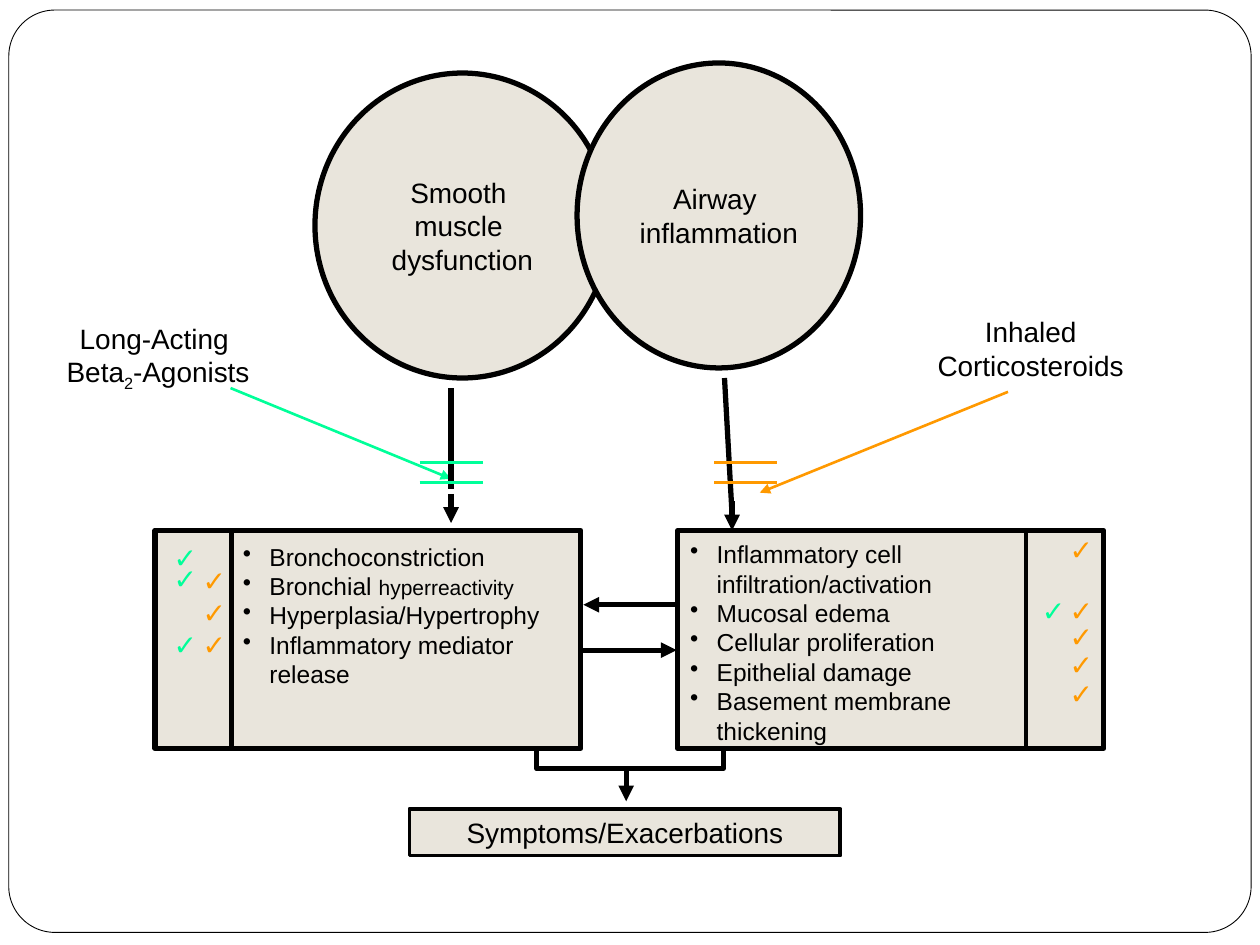
from typing import NamedTuple, Optional

from lxml.etree import SubElement
from pptx import Presentation
from pptx.dml.color import RGBColor
from pptx.enum.shapes import MSO_CONNECTOR, MSO_SHAPE
from pptx.enum.text import MSO_ANCHOR, MSO_AUTO_SIZE, PP_ALIGN
from pptx.oxml.ns import qn
from pptx.util import Inches, Pt

BLACK, WHITE, BEIGE = "000000", "FFFFFF", "E9E5DC"
AGONIST, STEROID = "00FF99", "FF9900"
CHECK_SIZE = (0.36, 0.37)


class Box(NamedTuple):
    left: float
    top: float
    width: float
    height: float


class Piece(NamedTuple):
    text: str
    size: Optional[float] = None
    baseline: Optional[int] = None


class Stroke(NamedTuple):
    start: tuple[float, float]
    end: tuple[float, float]
    color: str = BLACK
    weight: float = 3
    arrow: bool = False


class Checks(NamedTuple):
    left: float
    tops: tuple[float, ...]
    color: str


def rgb(color: str) -> RGBColor:
    return RGBColor.from_string(color)


def inches(values) -> list:
    return [Inches(value) for value in values]


def draw_shape(slide, kind, box: Box, fill: str = BEIGE, weight: float = 3):
    shape = slide.shapes.add_shape(kind, *inches(box))
    shape.shadow.inherit = False
    shape.fill.solid()
    shape.fill.fore_color.rgb = rgb(fill)
    shape.line.color.rgb = rgb(BLACK)
    shape.line.width = Pt(weight)
    return shape


def draw_stroke(slide, stroke: Stroke) -> None:
    connector = slide.shapes.add_connector(
        MSO_CONNECTOR.STRAIGHT, *inches(stroke.start + stroke.end))
    connector.line.color.rgb = rgb(stroke.color)
    connector.line.width = Pt(stroke.weight)
    if stroke.arrow:
        SubElement(connector.line._get_or_add_ln(), qn("a:tailEnd"), type="triangle")
    SubElement(connector._element.spPr, qn("a:effectLst"))


def write_text(shape, paragraphs: list, size: float = 16, color: str = BLACK,
               align=PP_ALIGN.CENTER, wrap: bool = True, bullets: bool = False) -> None:
    frame = shape.text_frame
    frame.word_wrap = wrap
    for index, pieces in enumerate(paragraphs):
        paragraph = frame.paragraphs[0] if index == 0 else frame.add_paragraph()
        first, *rest = [pieces] if isinstance(pieces, str) else pieces
        paragraph.text = first
        for piece in rest:
            run = paragraph.add_run()
            run.text = piece.text
            if piece.size:
                run.font.size = Pt(piece.size)
            if piece.baseline:
                run._r.get_or_add_rPr().set("baseline", str(piece.baseline))
        paragraph.alignment = align
        paragraph.font.size = Pt(size)
        paragraph.font.name = "Arial"
        paragraph.font.color.rgb = rgb(color)
        if bullets:
            properties = paragraph._p.get_or_add_pPr()
            properties.set("marL", str(Inches(0.21)))
            properties.set("indent", str(Inches(-0.21)))
            bullet = properties.makeelement(qn("a:buChar"), {"char": "•"})
            properties.insert(0, bullet)


def draw_text(slide, box: Box, paragraphs: list, **style) -> None:
    label = slide.shapes.add_textbox(*inches(box))
    label.text_frame.auto_size = MSO_AUTO_SIZE.SHAPE_TO_FIT_TEXT
    write_text(label, paragraphs, **style)


def draw_bullets(slide, box: Box, items: list) -> None:
    draw_text(slide, box, items, size=14, align=PP_ALIGN.LEFT, bullets=True)


def draw_circle(slide, box: Box, paragraphs: list) -> None:
    circle = draw_shape(slide, MSO_SHAPE.OVAL, box)
    circle.text_frame.vertical_anchor = MSO_ANCHOR.MIDDLE
    write_text(circle, paragraphs, wrap=False)


def draw_bracket(slide) -> None:
    builder = slide.shapes.build_freeform(Inches(4.26), Inches(5.85))
    corners = [(4.26, 6.1), (5.74, 6.1), (5.74, 5.81)]
    builder.add_line_segments([inches(corner) for corner in corners], close=False)
    bracket = builder.convert_to_shape()
    bracket.shadow.inherit = False
    bracket.fill.background()
    bracket.line.color.rgb = rgb(BLACK)
    bracket.line.width = Pt(3)


PATHWAYS = [
    Stroke((5.81, 3.98), (5.81, 4.21), arrow=True),
    Stroke((5.81, 4.08), (5.75, 3)),
    Stroke((5.43, 4.8), (4.63, 4.8), arrow=True),
    Stroke((4.57, 5.16), (5.37, 5.16), arrow=True),
]
TREATMENTS = [
    Stroke((3.58, 3.92), (3.58, 4.15), arrow=True),
    Stroke((4.97, 6.12), (4.97, 6.36), arrow=True),
    Stroke((1.83, 3.08), (3.58, 3.8), AGONIST, 1.5, True),
    Stroke((3.58, 3.88), (3.58, 3.08)),
    Stroke((1.84, 4.22), (1.84, 5.94)),
    Stroke((8.14, 4.22), (8.14, 5.96), weight=2.25),
    *(Stroke((left, y), (left + 0.5, y), color, 1.5)
      for left, color in ((3.33, AGONIST), (5.67, STEROID)) for y in (3.67, 3.83)),
    Stroke((8, 3.11), (6.03, 3.91), STEROID, 1.5, True),
]
CHECK_COLUMNS = [
    Checks(1.28, (4.24, 4.41, 4.93), AGONIST),
    Checks(8.17, (4.66,), AGONIST),
    Checks(1.51, (4.42, 4.68, 4.93), STEROID),
    Checks(8.39, (4.18, 4.66, 4.87, 5.09, 5.32), STEROID),
]


def main() -> None:
    """Build the airway disease and treatment diagram."""
    deck = Presentation()
    deck.slide_width, deck.slide_height = Inches(10), Inches(7.5)
    slide = deck.slides.add_slide(deck.slide_layouts[6])

    border = draw_shape(slide, MSO_SHAPE.ROUNDED_RECTANGLE,
                        Box(0.07, 0.08, 9.86, 7.32), WHITE, 0.5)
    border.adjustments[0] = 0.05
    for stroke in PATHWAYS:
        draw_stroke(slide, stroke)
    draw_bracket(slide)
    for left in (5.38, 1.23):
        draw_shape(slide, MSO_SHAPE.RECTANGLE, Box(left, 4.21, 3.38, 1.73))

    draw_circle(slide, Box(2.5, 0.58, 2.34, 2.42), ["Smooth \nmuscle ", "dysfunction"])
    draw_circle(slide, Box(4.58, 0.5, 2.25, 2.42), ["Airway ", "inflammation"])
    draw_bullets(slide, Box(5.38, 4.23, 2.93, 1.73), [
        "Inflammatory cell infiltration/activation", "Mucosal edema",
        "Cellular proliferation", "Epithelial damage", "Basement membrane thickening"])
    draw_bullets(slide, Box(1.83, 4.25, 2.75, 1.26), [
        "Bronchoconstriction", ("Bronchial ", Piece("hyperreactivity", size=12)),
        "Hyperplasia/Hypertrophy", "Inflammatory mediator release"])
    for stroke in TREATMENTS:
        draw_stroke(slide, stroke)

    outcome = draw_shape(slide, MSO_SHAPE.RECTANGLE, Box(3.25, 6.42, 3.42, 0.37), weight=2.25)
    write_text(outcome, ["Symptoms/Exacerbations"])
    draw_text(slide, Box(0.17, 2.5, 2.17, 0.64), [
        ("Long-Acting \nBeta", Piece("2", baseline=-25000), Piece("-Agonists"))])
    draw_text(slide, Box(7.03, 2.45, 2.3, 0.64), ["Inhaled Corticosteroids"])
    for column in CHECK_COLUMNS:
        for top in column.tops:
            draw_text(slide, Box(column.left, top, *CHECK_SIZE), ["✓"],
                      color=column.color, align=PP_ALIGN.LEFT, wrap=False)

    deck.save("out.pptx")


if __name__ == "__main__":
    main()
